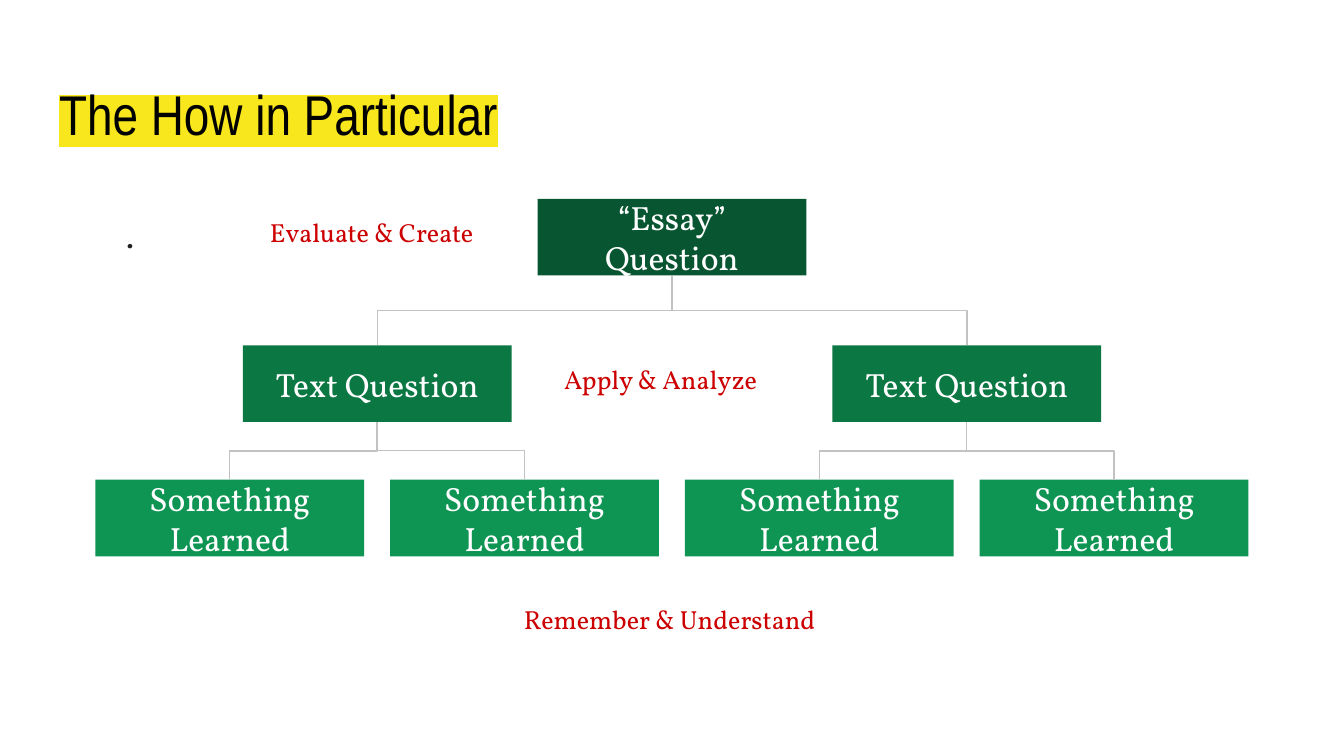
from lxml import etree
from pptx import Presentation, util as u
from pptx.dml.color import RGBColor
from pptx.enum import shapes, text
from pptx.oxml.ns import qn

WIDTH = 10
HEIGHT = WIDTH * 9 / 16
BOX_W, BOX_H = 2, 0.57
TREE_LEFT = 0.71
STEP = (WIDTH - 2 * TREE_LEFT - BOX_W) / 6  # half a bottom column's pitch
ROW_TOPS = (1.48, 2.57, 3.57)

# Each level: label, fill, columns counted in steps from the slide's centre
LEVELS = (
    ("“Essay” Question", "085631", (0,)),
    ("Text Question", "0B7743", (-2, 2)),
    ("Something Learned", "0E9453", (-3, -1, 1, 3)),
)
# Thinking skills: label, left, top, width
SKILLS = (
    ("Evaluate & Create", 1.91, 1.51, 1.9),
    ("Apply & Analyze", 4.1, 2.6, 1.9),
    ("Remember & Understand", 3.8, 4.39, 2.8),
)


def color(value):
    return RGBColor.from_string(value)


def inches(*lengths):
    return [u.Inches(length) for length in lengths]


def column_center(column):
    return WIDTH / 2 + column * STEP


def write(shape, words, size, ink, font="Vollkorn", align=text.PP_ALIGN.LEFT,
          anchor=text.MSO_ANCHOR.TOP, highlight=None):
    frame = shape.text_frame
    frame.word_wrap = True
    frame.auto_size = text.MSO_AUTO_SIZE.NONE
    frame.vertical_anchor = anchor
    frame.margin_left = frame.margin_right = u.Inches(0.1)
    frame.margin_top = frame.margin_bottom = u.Inches(0.1)
    paragraph = frame.paragraphs[0]
    paragraph.alignment = align
    run = paragraph.add_run()
    run.text = words
    run.font.size = u.Pt(size)
    run.font.name = font
    run.font.color.rgb = color(ink)
    if highlight:
        marker = etree.Element(qn("a:highlight"))
        etree.SubElement(marker, qn("a:srgbClr"), val=highlight)
        run._r.rPr.find(qn("a:solidFill")).addnext(marker)
    return paragraph


def add_label(slide, words, left, top, width, height, size, ink):
    label = slide.shapes.add_textbox(*inches(left, top, width, height))
    return write(label, words, size, ink)


def add_box(slide, words, column, row, fill):
    left = column_center(column) - BOX_W / 2
    box = slide.shapes.add_shape(
        shapes.MSO_SHAPE.RECTANGLE, *inches(left, ROW_TOPS[row], BOX_W, BOX_H))
    box.shadow.inherit = False
    box.fill.solid()
    box.fill.fore_color.rgb = color(fill)
    box.line.fill.background()
    write(box, words, 18, "FFFFFF", align=text.PP_ALIGN.CENTER,
          anchor=text.MSO_ANCHOR.MIDDLE)


def add_branch(slide, parent, child, row):
    """Elbow from a parent box down to a child box in the next row."""
    start, end = column_center(parent), column_center(child)
    top, bottom = ROW_TOPS[row] + BOX_H, ROW_TOPS[row + 1]
    middle_x, middle_y = (start + end) / 2, (top + bottom) / 2
    # The elbow lies on its side before the turn, so its sides are swapped
    half_w, half_h = (bottom - top) / 2, abs(end - start) / 2
    if child > parent:
        half_w = -half_w  # mirrored
    branch = slide.shapes.add_connector(
        shapes.MSO_CONNECTOR.ELBOW,
        *inches(middle_x - half_w, middle_y - half_h,
                middle_x + half_w, middle_y + half_h))
    branch.line.color.rgb = color("C2C2C2")
    branch.line.width = u.Pt(0.75)
    properties = branch._element.spPr
    properties.find(qn("a:xfrm")).set("rot", str(270 * 60000))
    etree.SubElement(properties, qn("a:effectLst"))


def main():
    deck = Presentation()
    deck.slide_width, deck.slide_height = inches(WIDTH, HEIGHT)
    slide = deck.slides.add_slide(deck.slide_layouts[5])

    # Title
    title = slide.shapes.title
    title.left, title.top, title.width, title.height = inches(
        0.34, 0.49, 9.32, 0.63)
    write(title, "The How in Particular", 30, "000000", font="Arial Narrow",
          highlight="F8E71C")

    # Body
    body = add_label(slide, ".", 0.34, 1.35, 9.32, 3.65, 18, "201F1E")
    body.line_spacing = 1.5
    body.space_before = u.Pt(12)
    body._p.get_or_add_pPr().set("marL", str(u.Inches(0.5)))

    # Question tree
    for row, (words, fill, columns) in enumerate(LEVELS):
        for column in columns:
            add_box(slide, words, column, row, fill)
    for row in range(len(LEVELS) - 1):
        children = LEVELS[row + 1][2]
        for index, child in enumerate(children):
            add_branch(slide, LEVELS[row][2][index // 2], child, row)

    # Thinking skills
    for words, left, top, width in SKILLS:
        add_label(slide, words, left, top, width, 0.51, 14, "CC0000")

    deck.save("out.pptx")


if __name__ == "__main__":
    main()
